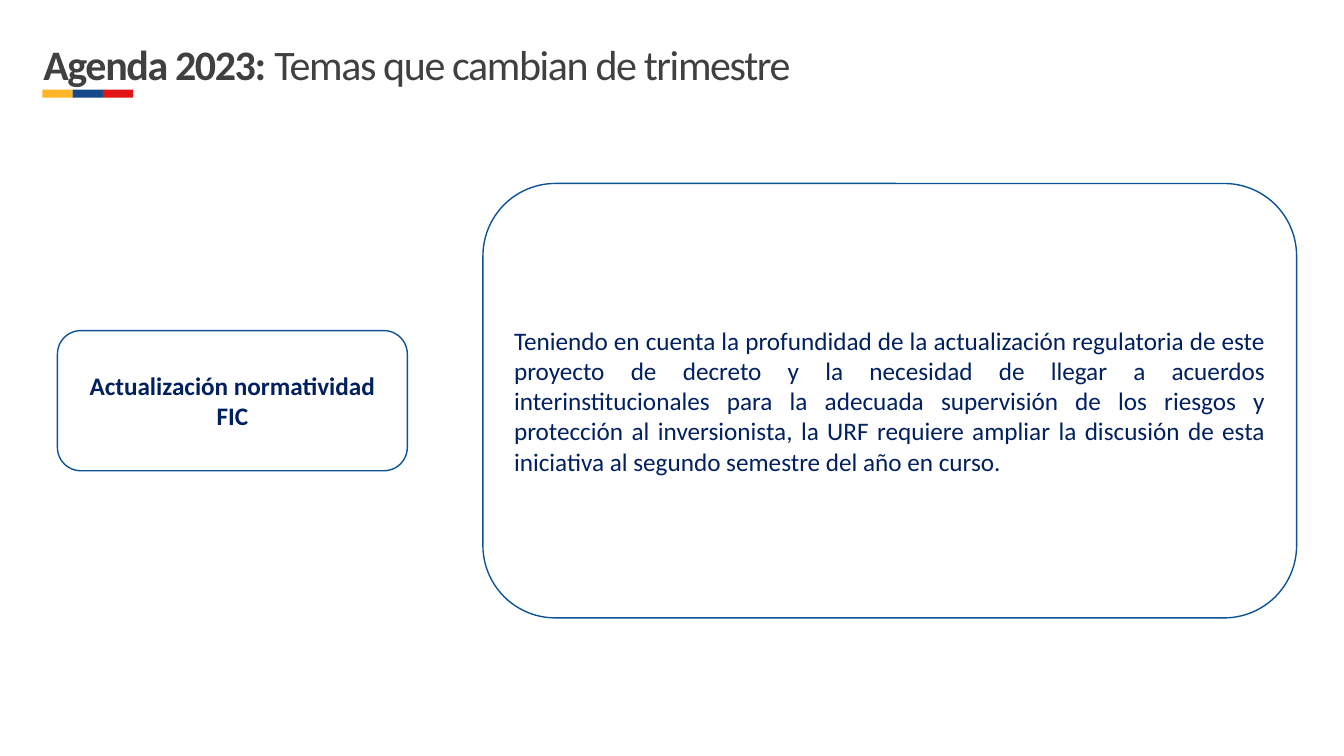
from pptx import Presentation
from pptx.dml.color import RGBColor
from pptx.enum.shapes import MSO_SHAPE as Shape
from pptx.enum.text import MSO_ANCHOR as Anchor, MSO_AUTO_SIZE as AutoSize, PP_ALIGN as Align
from pptx.util import Inches, Pt

GRAY = RGBColor(0x40, 0x40, 0x40)
NAVY = RGBColor(0x00, 0x20, 0x60)
OUTLINE = RGBColor(0x0B, 0x53, 0x94)
WHITE = RGBColor(0xFF, 0xFF, 0xFF)
YELLOW = RGBColor(0xFF, 0xB5, 0x27)
BLUE = RGBColor(0x15, 0x4A, 0x8A)
RED = RGBColor(0xE3, 0x14, 0x14)

TITLE = [("Agenda 2023: ", True), ("Temas que cambian de trimestre", False)]
TOPIC = "Actualización normatividad FIC"
REASON = (
    "Teniendo en cuenta la profundidad de la actualización regulatoria de este proyecto de "
    "decreto y la necesidad de llegar a acuerdos interinstitucionales para la adecuada "
    "supervisión de los riesgos y protección al inversionista, la URF requiere ampliar la "
    "discusión de esta iniciativa al segundo semestre del año en curso."
)
FLAG_COLORS = [YELLOW, BLUE, RED]
# text, bold, alignment, left, width, height
CARDS = [
    (TOPIC, True, Align.CENTER, 0.57, 3.47, 1.39),
    (REASON, False, Align.JUSTIFY, 4.79, 8.07, 4.31),
]
MARGIN = 0.42
FLAG_TOP, STRIPE_WIDTH, STRIPE_HEIGHT = 0.89, 0.3, 0.08
CARD_MIDDLE = 3.975


def set_all(target, values):
    for key, value in values.items():
        setattr(target, key, value)


def add_run(paragraph, text, size, color, bold):
    run = paragraph.add_run()
    run.text = text
    set_all(run.font, {"name": "Calibri", "size": Pt(size), "bold": bold})
    run.font.color.rgb = color
    return run


def add_filled(slide, kind, box, color):
    shape = slide.shapes.add_shape(kind, *map(Inches, box))
    shape.shadow.inherit = False
    shape.fill.solid()
    shape.fill.fore_color.rgb = color
    return shape


def add_title(slide):
    box = slide.shapes.add_textbox(*map(Inches, (MARGIN, 0.32, 10.69, 0.54)))
    frame = box.text_frame
    set_all(frame, {
        "word_wrap": True, "auto_size": AutoSize.SHAPE_TO_FIT_TEXT,
        "margin_left": 0, "margin_top": Inches(0.01), "margin_right": 0, "margin_bottom": 0,
    })
    heading = frame.paragraphs[0]
    set_all(heading, {"line_spacing": Pt(40), "space_before": Pt(0.8)})
    heading._p.get_or_add_pPr().set("marL", str(Inches(0.01)))
    for text, bold in TITLE:
        run = add_run(heading, text, 30, GRAY, bold)
        run.font._element.set("spc", "-100")


def add_flag(slide):
    for i, color in enumerate(FLAG_COLORS):
        box = (MARGIN + i * STRIPE_WIDTH, FLAG_TOP, STRIPE_WIDTH, STRIPE_HEIGHT)
        stripe = add_filled(slide, Shape.RECTANGLE, box, color)
        stripe.line.fill.background()


def add_card(slide, text, bold, alignment, left, width, height):
    box = (left, CARD_MIDDLE - height / 2, width, height)
    card = add_filled(slide, Shape.ROUNDED_RECTANGLE, box, WHITE)
    card.line.color.rgb = OUTLINE
    card.line.width = Pt(1)
    set_all(card.text_frame, {"word_wrap": True, "vertical_anchor": Anchor.MIDDLE})
    paragraph = card.text_frame.paragraphs[0]
    paragraph.alignment = alignment
    add_run(paragraph, text, 18, NAVY, bold)


def main():
    deck = Presentation()
    set_all(deck, {"slide_width": Inches(13.33), "slide_height": Inches(7.5)})
    slide = deck.slides.add_slide(deck.slide_layouts[6])
    add_title(slide)
    add_flag(slide)
    for card in CARDS:
        add_card(slide, *card)
    deck.save("out.pptx")


if __name__ == "__main__":
    main()
